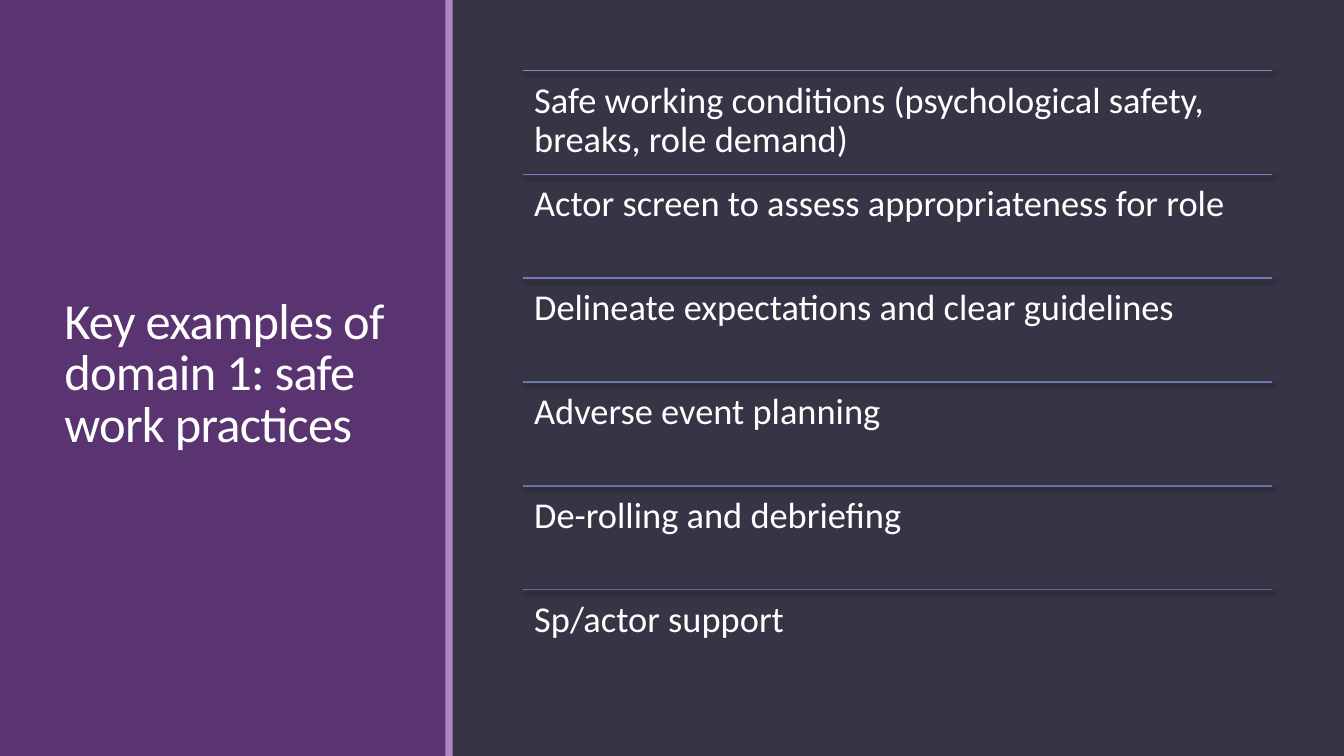
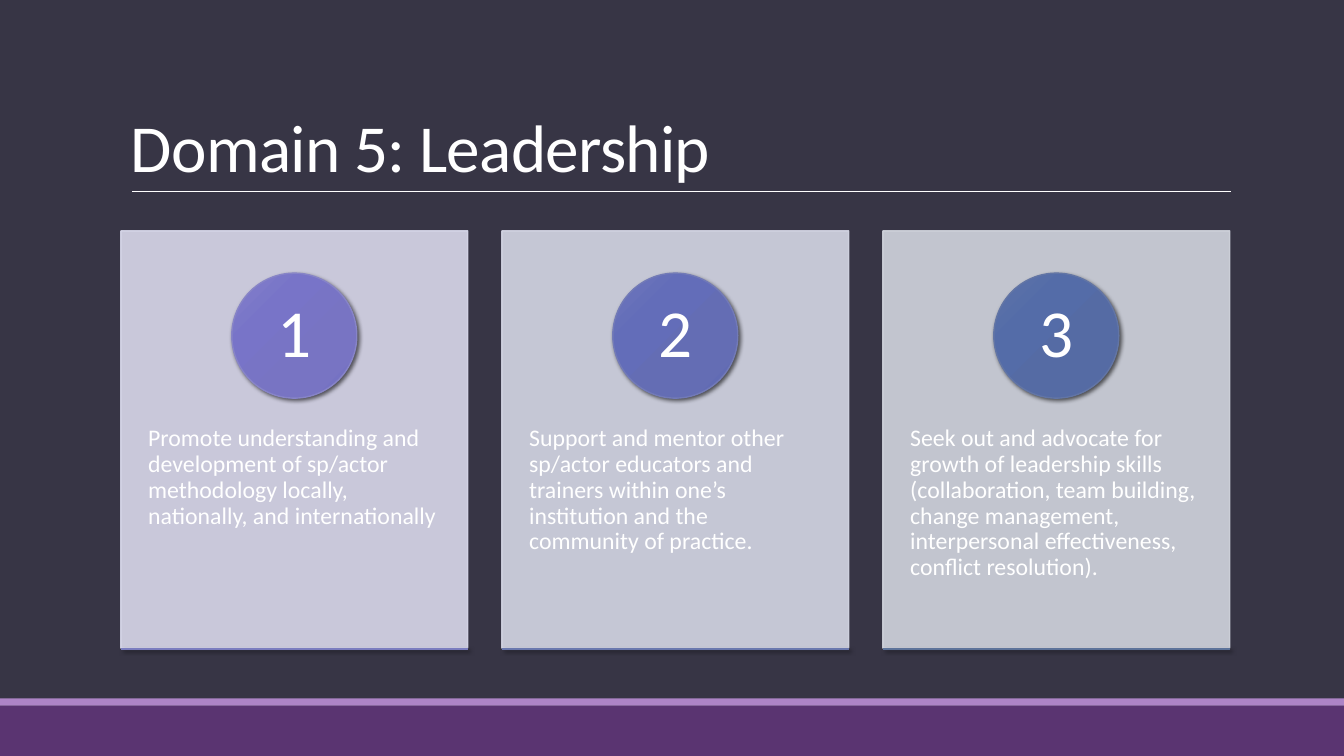
"""Build two dark purple slides: a ruled list and three numbered cards."""
from lxml.etree import SubElement
from pptx import Presentation
from pptx.dml.color import RGBColor
from pptx.enum.shapes import MSO_CONNECTOR, MSO_SHAPE
from pptx.enum.text import MSO_ANCHOR, PP_ALIGN
from pptx.oxml import parse_xml
from pptx.oxml.ns import nsdecls, qn
from pptx.util import Inches, Pt

COLS, ROWS, UNIT = 400, 225, 30480
DARK, PURPLE, LILAC, WHITE = "373545", "5A3471", "AD84C6", "FFFFFF"
ACCENTS = ["8784C7", "7B7DBF", "727AB7", "6A78AE", "6275A5", "5D739A"]
rgb = RGBColor.from_string


def draw(s, kind, box, fill=None, line=None, width=1, alpha=100, shadow=False):
    """Add a shape (box: left, top, width, height) or a line (kind None)."""
    x, y, w, h = [round(v * UNIT) for v in box]
    if kind is None:
        sp = s.shapes.add_connector(MSO_CONNECTOR.STRAIGHT, x, y, x + w, y + h)
    else:
        sp = s.shapes.add_shape(kind, x, y, w, h)
    props = sp._element.spPr
    if isinstance(fill, list):
        sp.fill.gradient()
        stops = "".join(f'<a:gs pos="{pos}000"><a:srgbClr val="{c}"/></a:gs>'
                        for pos, c in zip((0, 34, 70, 100), fill))
        props.replace(props.find(qn("a:gradFill")), parse_xml(
            f'<a:gradFill {nsdecls("a")}><a:gsLst>{stops}</a:gsLst><a:path path="circle">'
            '<a:fillToRect l="100000" t="100000" r="0" b="0"/></a:path></a:gradFill>'))
    elif fill:
        sp.fill.solid()
        sp.fill.fore_color.rgb = rgb(fill)
    if line:
        sp.line.color.rgb = rgb(line)
        sp.line.width = Pt(width)
    else:
        sp.line.fill.background()
    if alpha < 100:
        for clr in props.iter(qn("a:srgbClr")):
            SubElement(clr, qn("a:alpha")).set("val", str(alpha * 1000))
    effect = ('<a:outerShdw blurRad="38100" dist="25400" dir="2700000" rotWithShape="0">'
              '<a:srgbClr val="000000"><a:alpha val="60000"/></a:srgbClr></a:outerShdw>')
    props.append(parse_xml(
        f'<a:effectLst {nsdecls("a")}>{effect if shadow else ""}</a:effectLst>'))
    return sp


def write(sp, text, size, inset, anchor=MSO_ANCHOR.TOP, align=PP_ALIGN.LEFT,
          leading=0.9, spacing=0):
    """Fill a shape or text box with one white paragraph."""
    tf = sp.text_frame
    p = tf.paragraphs[0]
    r = p.add_run()
    r.text = text
    dx, dy = [Inches(v) for v in inset]
    formats = [
        (tf, dict(word_wrap=True, vertical_anchor=anchor, margin_left=dx,
                  margin_right=dx, margin_top=dy, margin_bottom=dy)),
        (p, dict(alignment=align, line_spacing=leading)),
        (r.font, dict(name="Calibri", size=Pt(size))),
    ]
    for target, values in formats:
        for key, value in values.items():
            setattr(target, key, value)
    r.font.color.rgb = rgb(WHITE)
    if spacing:
        r.font._element.set("spc", str(spacing))


prs = Presentation()
prs.slide_width, prs.slide_height = COLS * UNIT, ROWS * UNIT
bg = prs.slide_master.background.fill
bg.solid()
bg.fore_color.rgb = rgb(DARK)

pages = [
    dict(title="Key examples of domain 1: safe work practices", size=36,
         box=(16.2, 17.1, 101.1, 189.3), anchor=MSO_ANCHOR.MIDDLE,
         panel=(0, 0, 133, ROWS), edge=(132.6, 0, 2.1, ROWS)),
    dict(title="Domain 5: Leadership", size=48,
         box=(36, 9.3, 330, 47.7), anchor=MSO_ANCHOR.BOTTOM,
         panel=(0, 210, COLS, 15), edge=(0, 207.9, COLS, 2.1)),
]
slides = []
for page in pages:
    s = prs.slides.add_slide(prs.slide_layouts[6])
    draw(s, MSO_SHAPE.RECTANGLE, page["panel"], PURPLE)
    draw(s, MSO_SHAPE.RECTANGLE, page["edge"], LILAC)
    tb = s.shapes.add_textbox(*[round(v * UNIT) for v in page["box"]])
    write(tb, page["title"], page["size"], (0.1, 0.05), page["anchor"],
          leading=0.85, spacing=-50)
    slides.append(s)
practices, leadership = slides

items = [
    "Safe working conditions (psychological safety, breaks, role demand)",
    "Actor screen to assess appropriateness for role",
    "Delineate expectations and clear guidelines",
    "Adverse event planning",
    "De-rolling and debriefing",
    "Sp/actor support",
]
left, top, width, pitch = 155.7, 21, 222.9, 30.9
for i, (item, accent) in enumerate(zip(items, ACCENTS)):
    y = top + i * pitch
    draw(practices, None, (left, y, width, 0), line=accent, shadow=True)
    tb = practices.shapes.add_textbox(
        *[round(v * UNIT) for v in (left, y, width, pitch)])
    write(tb, item, 26, (0.11, 0.11))

draw(leadership, None, (39.3, 57, 327, 0), line=WHITE, width=0.5)
cards = [
    ("Promote understanding and development of sp/actor methodology locally, "
     "nationally, and internationally",
     "D9D9EB", ["7572C3", "7874C3", "7874C8", "8481CA"]),
    ("Support and mentor other sp/actor educators and trainers within one’s "
     "institution and the community of practice.",
     "D5D7E5", ["616BB4", "646DB4", "636DB9", "6F78BB"]),
    ("Seek out and advocate for growth of leadership skills (collaboration, "
     "team building, change management, interpersonal effectiveness, "
     "conflict resolution).",
     "D2D5DE", ["5269A4", "556BA4", "546CA8", "5F74A9"]),
]
left, top, width, height, pitch, disc = 36, 68.7, 103.2, 124.2, 113.4, 37.2
for i, (text, tint, shades) in enumerate(cards):
    x = left + i * pitch
    draw(leadership, MSO_SHAPE.RECTANGLE, (x, top, width, height), tint, tint, alpha=90)
    tb = leadership.shapes.add_textbox(
        *[round(v * UNIT) for v in (x, 116.1, width, 74.4)])
    write(tb, text, 17, (0.27, 0.36))
    badge = draw(leadership, MSO_SHAPE.OVAL,
                 (x + (width - disc) / 2, top + 12.6, disc, disc),
                 shades, ACCENTS[2 * i], shadow=True)
    write(badge, str(i + 1), 48, (0, 0), MSO_ANCHOR.MIDDLE, PP_ALIGN.CENTER)
    draw(leadership, None, (x, top + height + 0.3, width, 0),
         line=ACCENTS[2 * i + 1], shadow=True)

prs.save("out.pptx")
